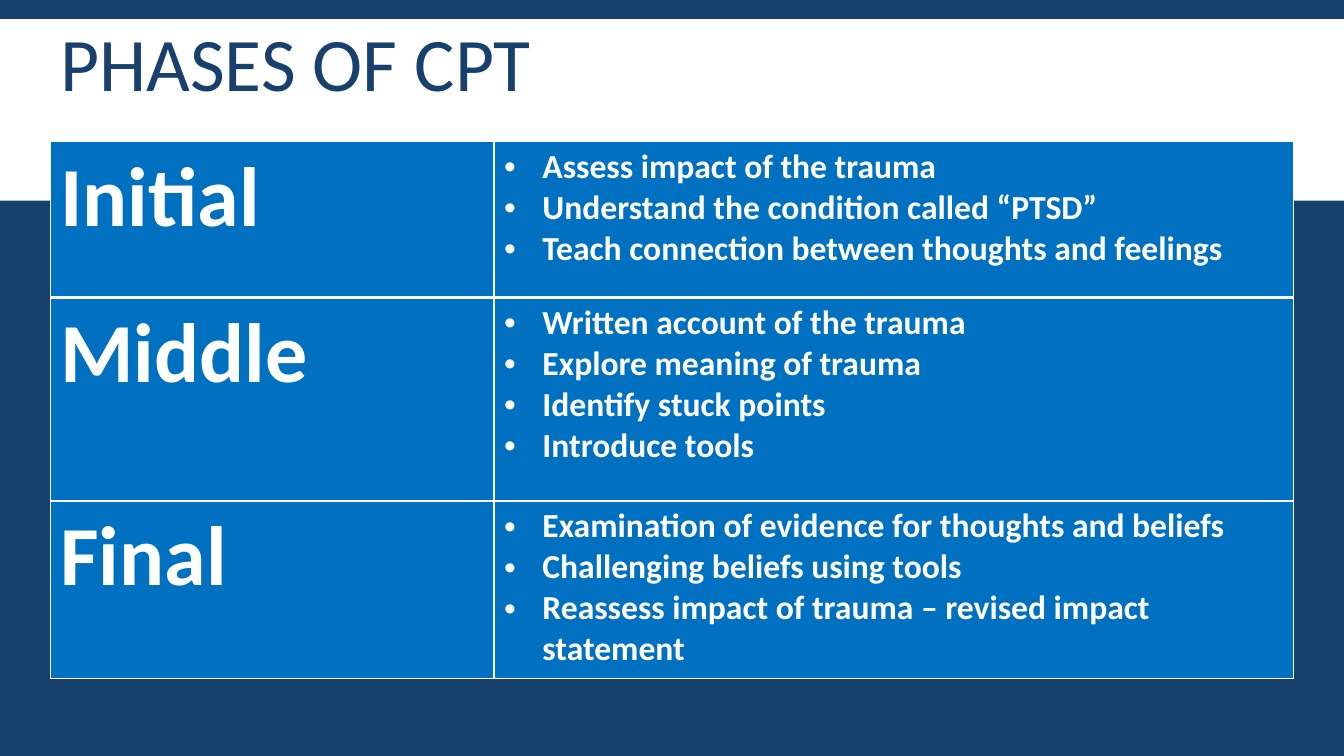
import pptx
import pptx.util
import pptx.dml.color
import pptx.enum.shapes
import pptx.enum.text
import pptx.oxml.ns
from lxml import etree

# Content
TITLE = "PHASES OF CPT"
PHASES = [
    ("Initial", ["Assess impact of the trauma",
                 "Understand the condition called “PTSD”",
                 "Teach connection between thoughts and feelings"]),
    ("Middle", ["Written account of the trauma",
                "Explore meaning of trauma",
                "Identify stuck points",
                "Introduce tools"]),
    ("Final", ["Examination of evidence for thoughts and beliefs",
               "Challenging beliefs using tools",
               "Reassess impact of trauma – revised impact statement"]),
]

# Format and grid, in inches and points
HEX = {"navy": "17406D", "blue": "0070C0", "white": "FFFFFF"}
WIDE, HIGH = 13.33, 7.5
EDGE, TOP = 0.5, 1.4
COLS = [4.4, 7.93]
ROWS = [1.55, 2.02, 1.76]
BAND = (0, 0.19, WIDE, 1.8)
HEAD = (EDGE, -0.05, 11.5, 1.45)
INDENT = 0.38
THIN, THICK = 1, 3
FONTS = {
    "title": {"name": "Calibri", "size": pptx.util.Pt(54), "bold": False},
    "phase": {"name": "Calibri", "size": pptx.util.Pt(60), "bold": True},
    "point": {"name": "Calibri", "size": pptx.util.Pt(24), "bold": True},
}

inch = pptx.util.Inches


def color(name):
    return pptx.dml.color.RGBColor.from_string(HEX[name])


def paint(part, name):
    part.fill.solid()
    part.fill.fore_color.rgb = color(name)


def write(para, text, style, tint):
    run = para.add_run()
    run.text = text
    for key, value in FONTS[style].items():
        setattr(run.font, key, value)
    run.font.color.rgb = color(tint)


def add(node, tag, **attrs):
    return etree.SubElement(node, pptx.oxml.ns.qn(tag), **attrs)


def bullet(para):
    props = para._p.get_or_add_pPr()
    props.set("marL", str(inch(INDENT)))
    props.set("indent", str(-inch(INDENT)))
    add(props, "a:buFont", typeface="Arial")
    add(props, "a:buChar", char="•")


def border(cell, row):
    props = cell._tc.get_or_add_tcPr()
    sides = {"L": THIN, "R": THIN,
             "T": THICK if row == 1 else THIN,
             "B": THICK if row == 0 else THIN}
    for side, width in sides.items():
        line = add(props, "a:ln" + side, w=str(pptx.util.Pt(width)))
        add(add(line, "a:solidFill"), "a:srgbClr", val=HEX["white"])


def main():
    deck = pptx.Presentation()
    deck.slide_width, deck.slide_height = inch(WIDE), inch(HIGH)
    slide = deck.slides.add_slide(deck.slide_layouts[6])
    paint(slide.background, "navy")

    # White band
    band = slide.shapes.add_shape(
        pptx.enum.shapes.MSO_SHAPE.RECTANGLE, *map(inch, BAND))
    band.shadow.inherit = False
    paint(band, "white")
    band.line.fill.background()

    # Title
    frame = slide.shapes.add_textbox(*map(inch, HEAD)).text_frame
    frame.word_wrap = True
    frame.vertical_anchor = pptx.enum.text.MSO_ANCHOR.MIDDLE
    para = frame.paragraphs[0]
    para.line_spacing = 0.85
    write(para, TITLE, "title", "navy")

    # Table of phases
    table = slide.shapes.add_table(
        len(ROWS), len(COLS),
        *map(inch, (EDGE, TOP, sum(COLS), sum(ROWS)))).table
    for col, width in zip(table.columns, COLS):
        col.width = inch(width)
    for row, (phase, points) in enumerate(PHASES):
        table.rows[row].height = inch(ROWS[row])
        left, right = table.rows[row].cells
        for cell in (left, right):
            border(cell, row)
            paint(cell, "blue")
        write(left.text_frame.paragraphs[0], phase, "phase", "white")
        frame = right.text_frame
        for spot, point in enumerate(points):
            para = frame.add_paragraph() if spot else frame.paragraphs[0]
            bullet(para)
            write(para, point, "point", "white")

    deck.save("out.pptx")


if __name__ == "__main__":
    main()
